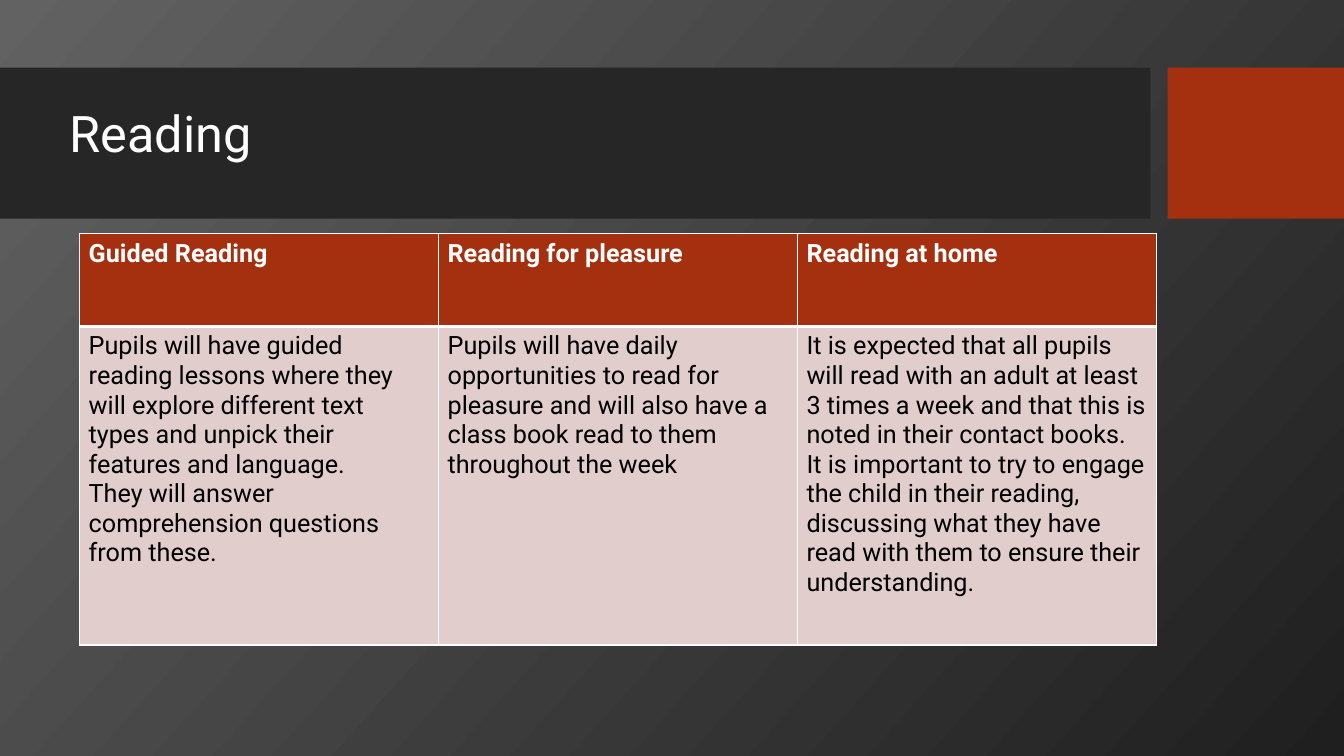
from dataclasses import dataclass

from lxml.etree import SubElement
from pptx import Presentation
from pptx.dml.color import RGBColor as RGB
from pptx.enum.shapes import MSO_SHAPE as SHAPE
from pptx.enum.text import MSO_ANCHOR as ANCHOR, MSO_AUTO_SIZE as AUTO, PP_ALIGN as ALIGN
from pptx.oxml.ns import qn
from pptx.util import Inches, Pt

TITLE = "Reading"
COLUMNS = [
    ("Guided Reading", [
        "Pupils will have guided reading lessons where they will explore different "
        "text types and unpick their features and language.",
        "They will answer comprehension questions from these.",
    ]),
    ("Reading for pleasure", [
        "Pupils will have daily opportunities to read for pleasure and will also have "
        "a class book read to them throughout the week",
    ]),
    ("Reading at home", [
        "It is expected that all pupils will read with an adult at least 3 times a week "
        "and that this is noted in their contact books. It is important to try to engage "
        "the child in their reading, discussing what they have read with them to ensure "
        "their understanding.",
    ]),
]


@dataclass(frozen=True)
class Theme:
    """Colours, font and type sizes of the slide."""
    font: str = "Roboto"
    title_size: int = 36
    table_size: int = 18
    light: str = "FFFFFF"
    dark: str = "000000"
    band: str = "262626"
    accent: str = "A5300F"
    cell: str = "E1CDCC"
    backdrop: tuple = ("626262", "1F1F1F")


THEME = Theme()
BAND_TOP, BAND_HEIGHT = 0.67, 1.5
BANDS = [(0, 11.41, THEME.band), (11.58, 1.75, THEME.accent)]
TITLE_BOX = (0.59, 0.76, 10.51, 1.18)
TABLE_LEFT, TABLE_TOP = 0.79, 2.32
COLUMN_WIDTH = 3.56
ROW_HEIGHTS = (0.92, 3.16)
THIN, THICK = 1, 3


def add_run(p, text, size, color, bold=False):
    """Add one formatted run to a paragraph."""
    r = p.add_run()
    r.text = text
    r.font.name, r.font.size, r.font.bold = THEME.font, Pt(size), bold
    r.font.color.rgb = RGB.from_string(color)


def set_borders(cell, top, bottom):
    """Draw light borders around a cell."""
    tc_pr = cell._tc.get_or_add_tcPr()
    for side, width in (("L", THIN), ("R", THIN), ("T", top), ("B", bottom)):
        ln = SubElement(tc_pr, qn(f"a:ln{side}"), w=str(Pt(width)))
        SubElement(SubElement(ln, qn("a:solidFill")), qn("a:srgbClr"), val=THEME.light)


def fill_cell(cell, lines, fill, color, bold, borders):
    """Write the paragraphs of a cell and style it."""
    set_borders(cell, *borders)
    cell.fill.solid()
    cell.fill.fore_color.rgb = RGB.from_string(fill)
    cell.margin_left = cell.margin_right = Inches(0.09)
    cell.margin_top = cell.margin_bottom = Inches(0.05)
    tf = cell.text_frame
    for i, line in enumerate(lines):
        p = tf.add_paragraph() if i else tf.paragraphs[0]
        add_run(p, line, THEME.table_size, color, bold)


def set_background(s):
    """Give the slide its diagonal gradient."""
    fill = s.background.fill
    fill.gradient()
    fill.gradient_angle = 318
    for stop, color in zip(fill.gradient_stops, THEME.backdrop):
        stop.color.rgb = RGB.from_string(color)


def add_title(s):
    """Place the title over its two bands."""
    title = s.shapes.title
    title.left, title.top, title.width, title.height = map(Inches, TITLE_BOX)
    tf = title.text_frame
    tf.word_wrap, tf.auto_size = True, AUTO.NONE
    tf.vertical_anchor = ANCHOR.MIDDLE
    p = tf.paragraphs[0]
    p.alignment, p.line_spacing = ALIGN.LEFT, 0.9
    add_run(p, TITLE, THEME.title_size, THEME.light)
    for left, width, color in BANDS:
        sp = s.shapes.add_shape(SHAPE.RECTANGLE, Inches(left), Inches(BAND_TOP),
                                Inches(width), Inches(BAND_HEIGHT))
        sp.shadow.inherit = False
        sp.fill.solid()
        sp.fill.fore_color.rgb = RGB.from_string(color)
        sp.line.fill.background()
        title.element.addprevious(sp.element)


def add_reading_table(s):
    """Add the table with one column per kind of reading."""
    table = s.shapes.add_table(
        len(ROW_HEIGHTS), len(COLUMNS), Inches(TABLE_LEFT), Inches(TABLE_TOP),
        Inches(COLUMN_WIDTH * len(COLUMNS)), Inches(sum(ROW_HEIGHTS))).table
    table.horz_banding = False
    for row, height in zip(table.rows, ROW_HEIGHTS):
        row.height = Inches(height)
    for i, (heading, lines) in enumerate(COLUMNS):
        table.columns[i].width = Inches(COLUMN_WIDTH)
        fill_cell(table.cell(0, i), [heading], THEME.accent, THEME.light, True, (THIN, THICK))
        fill_cell(table.cell(1, i), lines, THEME.cell, THEME.dark, False, (THICK, THIN))


def main():
    """Build and save the slide."""
    prs = Presentation()
    prs.slide_width, prs.slide_height = Inches(13.33), Inches(7.5)
    s = prs.slides.add_slide(prs.slide_layouts[5])
    set_background(s)
    add_title(s)
    add_reading_table(s)
    prs.save("out.pptx")


if __name__ == "__main__":
    main()
